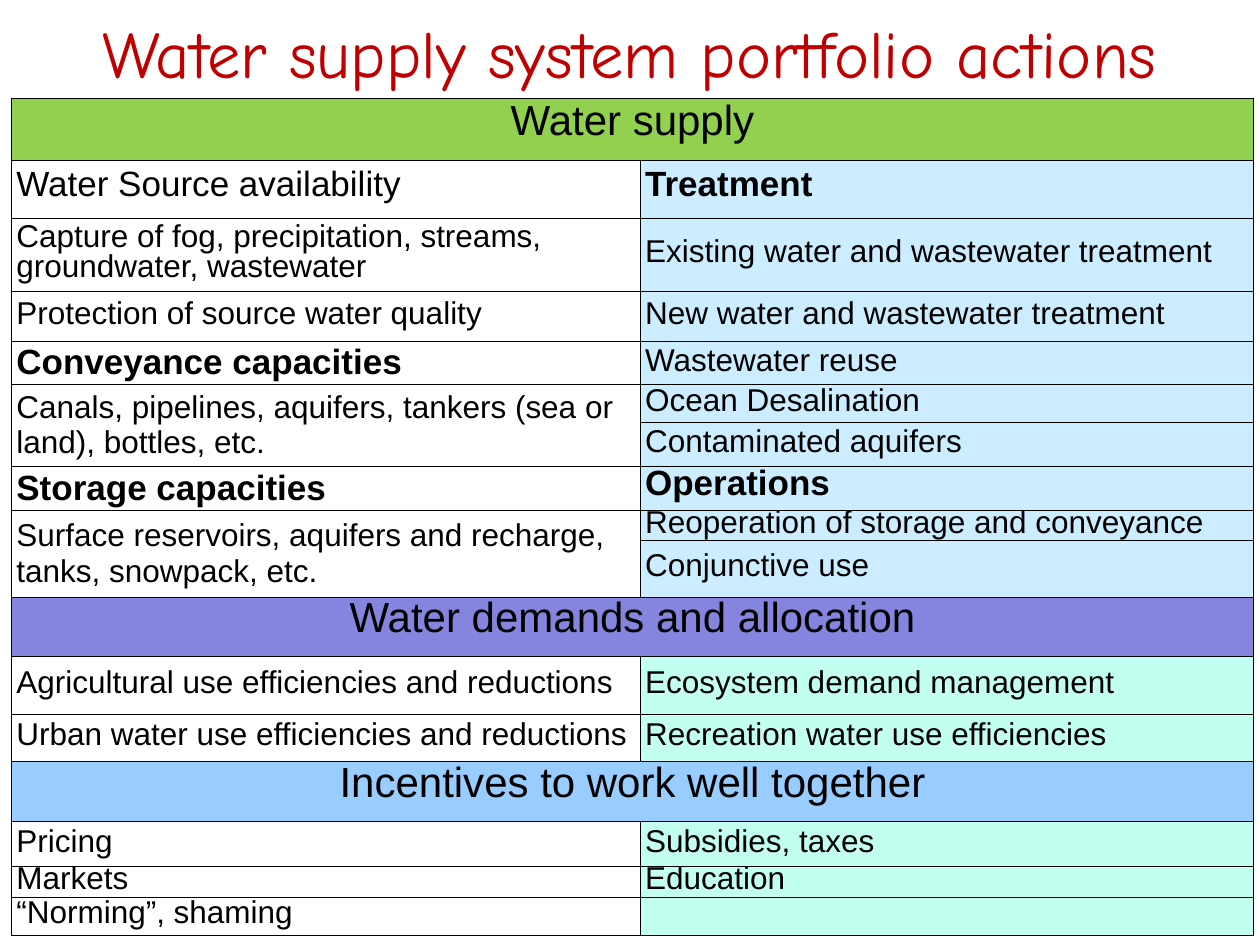
"""Build the water supply portfolio actions slide."""
from lxml import etree
from pptx import Presentation
from pptx.dml.color import RGBColor
from pptx.enum.text import MSO_ANCHOR, PP_ALIGN
from pptx.oxml.ns import qn
from pptx.util import Inches, Pt

MIDDLE = MSO_ANCHOR.MIDDLE
CENTER, LEFT = PP_ALIGN.CENTER, PP_ALIGN.LEFT
COLORS = {
    "title": "C00000", "text": "000000", "border": "000000",
    "supply": "92D050", "demand": "8585E0", "incentive": "99CCFF",
    "blue": "CCECFF", "mint": "C2FFF0",
}
BAND = {"size": Pt(24), "bold": False, "name": "Arial"}
PLAIN_HEAD = {"size": Pt(20), "bold": False, "name": "Arial"}
HEAD = {"size": Pt(20), "bold": True, "name": "Arial"}
BODY = {"size": Pt(18), "bold": False, "name": "Arial"}
TITLE = {"size": Pt(38), "bold": False, "name": "Comic Neue"}
HEADS = {
    "Water Source availability": PLAIN_HEAD, "Treatment": HEAD,
    "Conveyance capacities": HEAD, "Storage capacities": HEAD, "Operations": HEAD,
}
SINGLE_SPACED = {"Conveyance capacities", "Storage capacities"}
COL_WIDTHS = [4.99, 4.87]
ROWS = [
    (0.49, "Water supply", None, "supply"),
    (0.46, "Water Source availability", "Treatment", "blue"),
    (0.58, "Capture of fog, precipitation, streams, groundwater, wastewater",
     "Existing water and wastewater treatment", "blue"),
    (0.40, "Protection of source water quality", "New water and wastewater treatment", "blue"),
    (0.34, "Conveyance capacities", "Wastewater reuse", "blue"),
    (0.30, "Canals, pipelines, aquifers, tankers (sea or\nland), bottles, etc.",
     "Ocean Desalination", "blue"),
    (0.35, None, "Contaminated aquifers", "blue"),
    (0.35, "Storage capacities", "Operations", "blue"),
    (0.24, "Surface reservoirs, aquifers and recharge,\ntanks, snowpack, etc.",
     "Reoperation of storage and conveyance", "blue"),
    (0.45, None, "Conjunctive use", "blue"),
    (0.47, "Water demands and allocation", None, "demand"),
    (0.46, "Agricultural use efficiencies and reductions", "Ecosystem demand management", "mint"),
    (0.37, "Urban water use efficiencies and reductions",
     "Recreation water use efficiencies", "mint"),
    (0.48, "Incentives to work well together", None, "incentive"),
    (0.36, "Pricing", "Subsidies, taxes", "mint"),
    (0.24, "Markets", "Education", "mint"),
    (0.29, "“Norming”, shaming", "", "mint"),
]


def write(tf, text, fmt, color, align, spacing=None):
    tf.text = text
    for p in tf.paragraphs:
        p.alignment = align
        p.line_spacing = spacing
        for r in p.runs:
            for key, value in fmt.items():
                setattr(r.font, key, value)
            r.font.color.rgb = RGBColor.from_string(COLORS[color])


def add_borders(cell):
    tc_pr = cell._tc.get_or_add_tcPr()
    for i, side in enumerate(("a:lnL", "a:lnR", "a:lnT", "a:lnB")):
        ln = etree.Element(qn(side), w=str(Pt(0.25)))
        fill = etree.SubElement(ln, qn("a:solidFill"))
        etree.SubElement(fill, qn("a:srgbClr"), val=COLORS["border"])
        tc_pr.insert(i, ln)


prs = Presentation()
prs.slide_width, prs.slide_height = Inches(10), Inches(7.5)
s = prs.slides.add_slide(prs.slide_layouts[6])

sp = s.shapes.add_textbox(0, 0, Inches(10), Inches(0.82))
tf = sp.text_frame
tf.word_wrap = True
tf.vertical_anchor = MIDDLE
write(tf, "Water supply system portfolio actions", TITLE, "title", CENTER)

height = sum(row[0] for row in ROWS)
table = s.shapes.add_table(len(ROWS), 2, Inches(0.09), Inches(0.78),
                           Inches(sum(COL_WIDTHS)), Inches(height)).table
table.first_row = table.horz_banding = False
for col, width in zip(table.columns, COL_WIDTHS):
    col.width = Inches(width)

for i, (row_height, left, right, fill) in enumerate(ROWS):
    table.rows[i].height = Inches(row_height)
    band = right is None
    if band:
        table.cell(i, 0).merge(table.cell(i, 1))
    if left is None:
        table.cell(i - 1, 0).merge(table.cell(i, 0))
    for j, text in enumerate((left, right)):
        cell = table.cell(i, j)
        cell.vertical_anchor = MIDDLE
        cell.margin_left = cell.margin_right = Inches(0.04)
        cell.margin_top = cell.margin_bottom = 0
        if band or j == 1:
            cell.fill.solid()
            cell.fill.fore_color.rgb = RGBColor.from_string(COLORS[fill])
        else:
            cell.fill.background()
        add_borders(cell)
        if text is not None:
            fmt = BAND if band else HEADS.get(text, BODY)
            single = text in SINGLE_SPACED or "\n" in text
            write(cell.text_frame, text, fmt, "text", CENTER if band else LEFT,
                  None if single else Pt(17))

prs.save("out.pptx")
